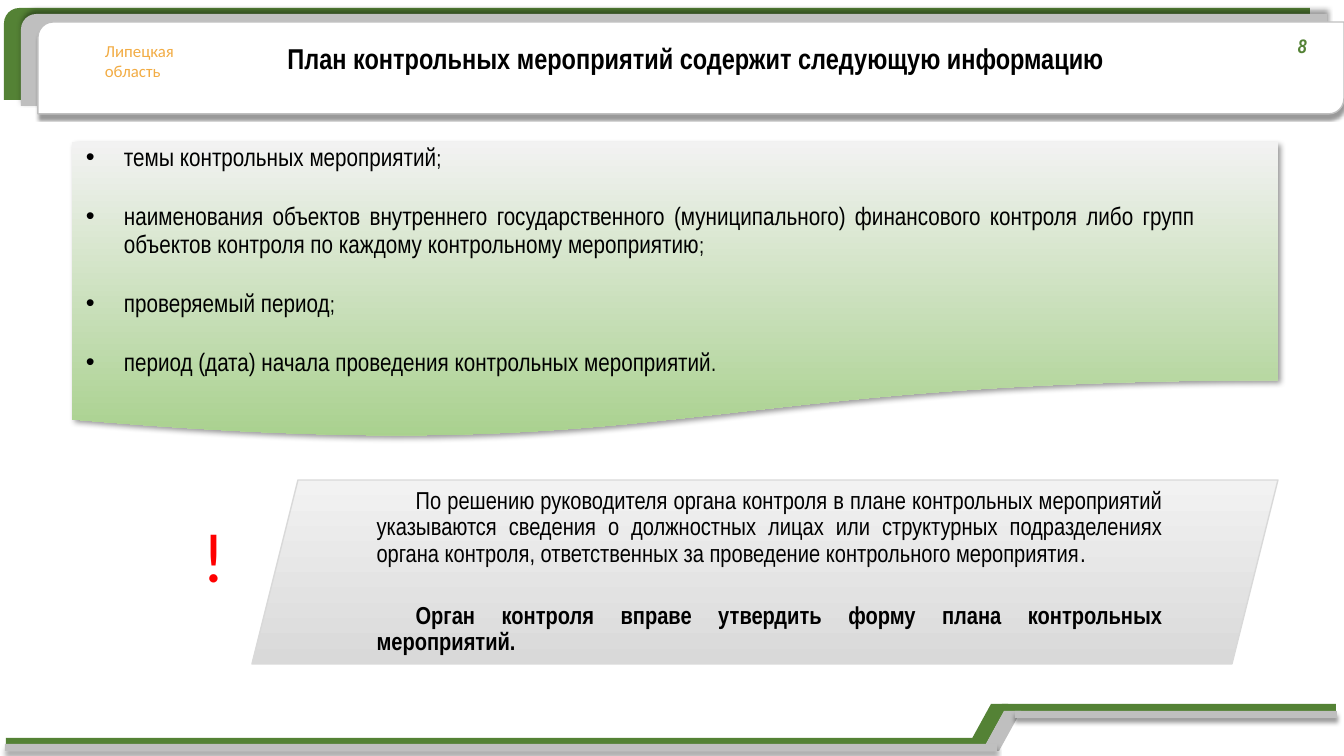
from dataclasses import dataclass

from lxml.etree import SubElement
from pptx import Presentation
from pptx.dml.color import RGBColor
from pptx.enum.shapes import MSO_SHAPE
from pptx.enum.text import MSO_ANCHOR, MSO_AUTO_SIZE, PP_ALIGN
from pptx.oxml.ns import qn
from pptx.util import Pt

PX = 9071  # EMU in one px, slide is 1344 x 756 px


@dataclass(frozen=True)
class Theme:
    green: str = "548235"
    light_green: str = "A9D18E"
    grey: str = "BFBFBF"
    mid_grey: str = "D9D9D9"
    pale: str = "F2F2F2"
    white: str = "FFFFFF"
    black: str = "000000"
    orange: str = "F2AC44"
    red: str = "FF0000"
    narrow: str = "Arial Narrow"
    plain: str = "Calibri"
    title: float = 20.5
    bullet: float = 18
    bullet_mark: float = 16
    note: float = 17.5
    note_mark: float = 18
    number: float = 14
    region: float = 12
    alert: float = 50


theme = Theme()


def style_shape(shape, fill, line=None, shadow=None):
    """Fill is one colour or (top, bottom); shadow is (blur pt, distance pt, degrees)."""
    if isinstance(fill, tuple):
        shape.fill.gradient()
        shape.fill.gradient_angle = 270
        for stop, color in zip(shape.fill.gradient_stops, fill):
            stop.color.rgb = RGBColor.from_string(color)
        shape.fill.gradient_stops[0].position = 0
        shape.fill.gradient_stops[1].position = 1
    else:
        shape.fill.solid()
        shape.fill.fore_color.rgb = RGBColor.from_string(fill)
    if line:
        shape.line.color.rgb = RGBColor.from_string(line)
        shape.line.width = Pt(1)
    else:
        shape.line.fill.background()
    shape.shadow.inherit = False
    if shadow:
        blur, distance, angle = shadow
        effects = shape.element.spPr.find(qn("a:effectLst"))
        outer = SubElement(effects, qn("a:outerShdw"), blurRad=str(Pt(blur)),
                           dist=str(Pt(distance)), dir=str(angle * 60000), rotWithShape="0")
        color = SubElement(outer, qn("a:srgbClr"), val=theme.black)
        SubElement(color, qn("a:alpha"), val="40000")


def add_span(para, text, size, color=theme.black, font=theme.narrow, bold=False, italic=False):
    span = para.add_run()
    span.text = text
    span.font.size = Pt(size)
    span.font.name = font
    span.font.bold = bold
    span.font.italic = italic
    span.font.color.rgb = RGBColor.from_string(color)


deck = Presentation()
deck.slide_width, deck.slide_height = 1344 * PX, 756 * PX
page = deck.slides.add_slide(deck.slide_layouts[5])
shapes = page.shapes

# Header plates
for left, top, fill, line, shadow in (
    (4, 8, theme.green, None, None),
    (21, 14, theme.grey, None, (4, 3, 270)),
    (38, 22, theme.white, theme.grey, (2, 3, 90)),
):
    plate = shapes.add_shape(MSO_SHAPE.ROUND_2_DIAG_RECTANGLE,
                             left * PX, top * PX, 1306 * PX, 92 * PX)
    style_shape(plate, fill, line, shadow)

# Footer ribbons: low bar, slanted joint, high bar
for color, low, joint, high, shadow in (
    (theme.green, (6, 738, 980), (969, 704), (1002, 704, 334), None),
    (theme.grey, (5, 744, 992), (982, 711), (1015, 711, 322), (3, 3, 90)),
):
    left, top = joint
    builder = shapes.build_freeform(left, top + 40, scale=PX)
    builder.add_line_segments([(left + 22, top), (left + 39, top), (left + 17, top + 40)])
    style_shape(builder.convert_to_shape(), color)
    for bar_left, bar_top, width in (low, high):
        bar = shapes.add_shape(MSO_SHAPE.RECTANGLE, bar_left * PX, bar_top * PX, width * PX, 7 * PX)
        style_shape(bar, color, shadow=shadow)

# Title
title = shapes.title
title.left, title.top, title.width, title.height = 204 * PX, 35 * PX, 984 * PX, 46 * PX
title.text_frame.auto_size = MSO_AUTO_SIZE.NONE
title.text_frame.word_wrap = True
title.text_frame.vertical_anchor = MSO_ANCHOR.MIDDLE
para = title.text_frame.paragraphs[0]
para.alignment = PP_ALIGN.CENTER
add_span(para, "План контрольных мероприятий содержит следующую информацию", theme.title, bold=True)
title.element.getparent().append(title.element)  # in front of the header plates

# Region name, page number and exclamation mark
for (left, top, width, height), lines, align, look in (
    ((95, 36, 92, 50), ("Липецкая", "область"), PP_ALIGN.LEFT,
     dict(size=theme.region, color=theme.orange, font=theme.plain)),
    ((1288, 29, 40, 34), ("8",), PP_ALIGN.LEFT,
     dict(size=theme.number, color=theme.green, bold=True, italic=True)),
    ((162, 508, 103, 95), ("!",), PP_ALIGN.CENTER,
     dict(size=theme.alert, color=theme.red, font=theme.plain)),
):
    box = shapes.add_textbox(left * PX, top * PX, width * PX, height * PX)
    box.text_frame.word_wrap = True
    for index, text in enumerate(lines):
        para = box.text_frame.add_paragraph() if index else box.text_frame.paragraphs[0]
        para.alignment = align
        add_span(para, text, **look)

# Contents of the plan and the note below it
contents = shapes.add_shape(MSO_SHAPE.FLOWCHART_DOCUMENT, 72 * PX, 142 * PX, 1206 * PX, 297 * PX)
style_shape(contents, (theme.pale, theme.light_green), shadow=(4, 3, 45))
frame = contents.text_frame
frame.margin_left = frame.margin_right = frame.margin_top = frame.margin_bottom = 4 * PX

note = shapes.add_shape(MSO_SHAPE.PARALLELOGRAM, 252 * PX, 480 * PX, 1026 * PX, 184 * PX)
style_shape(note, (theme.pale, theme.mid_grey), line=theme.mid_grey)

bullets = (
    ("темы контрольных мероприятий", ";"),
    ("наименования объектов внутреннего государственного (муниципального) финансового "
     "контроля либо групп объектов контроля по каждому контрольному мероприятию", ";"),
    ("проверяемый период", ";"),
    ("период (дата) начала проведения контрольных мероприятий", "."),
)
remarks = (
    ("По решению руководителя органа контроля в плане контрольных мероприятий указываются "
     "сведения о должностных лицах или структурных подразделениях органа контроля, "
     "ответственных за проведение контрольного мероприятия", "."),
    ("Орган контроля вправе утвердить форму плана контрольных мероприятий.", ""),
)
for shape, items, size, mark_size, gap, margins, bulleted in (
    (contents, bullets, theme.bullet, theme.bullet_mark, 23, (48, 79, -38), True),
    (note, remarks, theme.note, theme.note_mark, 25, (10, 0, 39), False),
):
    frame = shape.text_frame
    frame.word_wrap = True
    frame.vertical_anchor = MSO_ANCHOR.MIDDLE
    for index, (text, mark) in enumerate(items):
        para = frame.add_paragraph() if index else frame.paragraphs[0]
        props = para._p.get_or_add_pPr()
        for name, length in zip(("marL", "marR", "indent"), margins):
            props.set(name, str(length * PX))
        if bulleted:
            SubElement(props, qn("a:buFont"), typeface="Arial")
            SubElement(props, qn("a:buChar"), char="•")
        para.alignment = PP_ALIGN.JUSTIFY
        para.line_spacing = 0.9
        para.space_before = Pt(gap if index else 0)
        add_span(para, text, size, bold=not mark)
        if mark:
            add_span(para, mark, mark_size)

deck.save("out.pptx")
